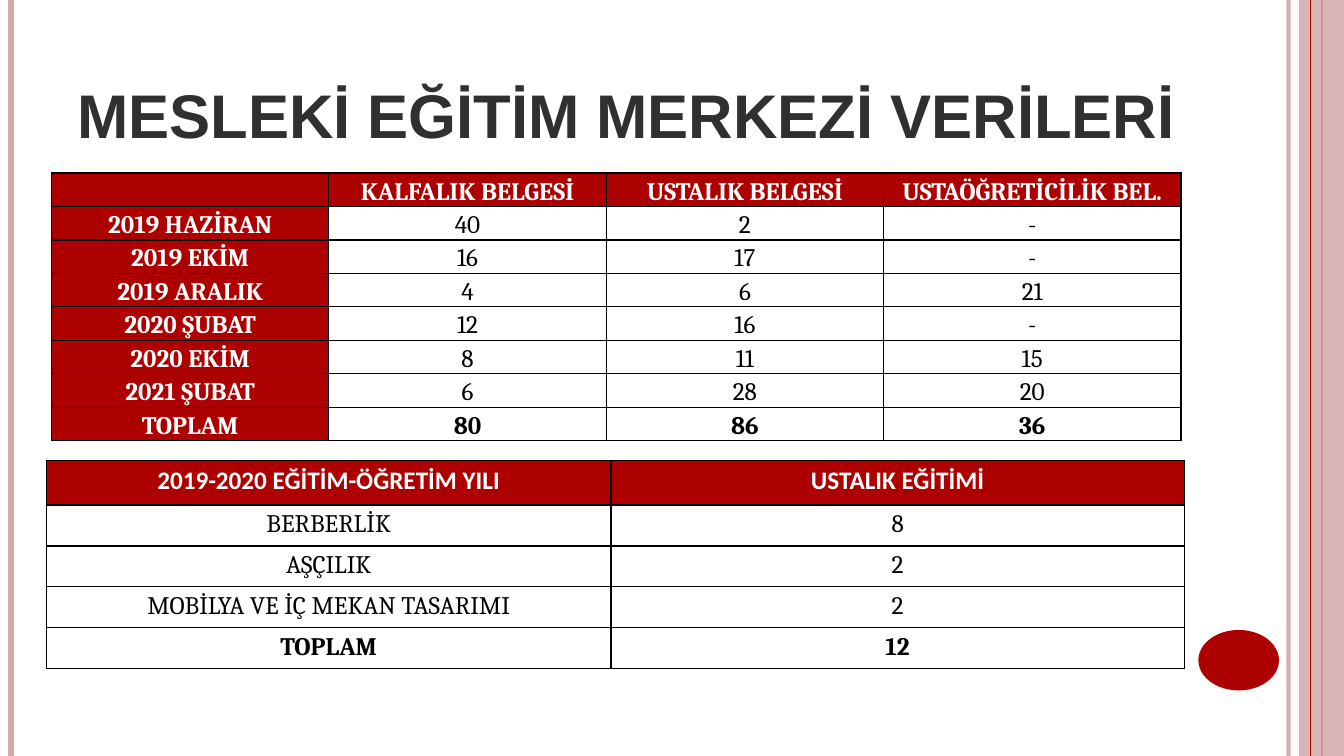
from dataclasses import dataclass

from lxml import etree
from pptx import Presentation
from pptx.dml.color import RGBColor
from pptx.enum import shapes, text
from pptx.oxml import ns
from pptx.util import Pt


@dataclass(frozen=True)
class Theme:
    red: str = "AD0101"
    rose: str = "D3ABAB"
    white: str = "FFFFFF"
    black: str = "000000"
    charcoal: str = "303030"
    title_font: str = "Arial"
    heading_font: str = "Calibri"
    body_font: str = "Cambria"
    title_size: int = 44
    cell_size: int = 18


THEME = Theme()
SLIDE_WIDTH, SLIDE_HEIGHT = 960, 540

CERTIFICATES = [
    ["", "KALFALIK BELGESİ", "USTALIK BELGESİ", "USTAÖĞRETİCİLİK BEL."],
    ["2019 HAZİRAN", "40", "2", "-"],
    ["2019 EKİM", "16", "17", "-"],
    ["2019 ARALIK", "4", "6", "21"],
    ["2020 ŞUBAT", "12", "16", "-"],
    ["2020 EKİM", "8", "11", "15"],
    ["2021 ŞUBAT", "6", "28", "20"],
    ["TOPLAM", "80", "86", "36"],
]
TRAINING = [
    ["2019-2020 EĞİTİM-ÖĞRETİM YILI", "USTALIK EĞİTİMİ"],
    ["BERBERLİK", "8"],
    ["AŞÇILIK", "2"],
    ["MOBİLYA VE İÇ MEKAN TASARIMI", "2"],
    ["TOPLAM", "12"],
]


def rgb(color):
    return RGBColor.from_string(color)


def set_alpha(part, percent):
    color = next(part._element.spPr.iter(ns.qn("a:srgbClr")))
    etree.SubElement(color, ns.qn("a:alpha"), val=str(percent * 1000))


def style_font(font, name, size, color, bold):
    font.name, font.size, font.bold = name, Pt(size), bold
    font.color.rgb = rgb(color)


def add_rule(slide, x, height, color, width):
    rule = slide.shapes.add_connector(
        shapes.MSO_CONNECTOR.STRAIGHT, Pt(x), Pt(0), Pt(x), Pt(height))
    rule.line.color.rgb = rgb(color)
    rule.line.width = Pt(width)
    etree.SubElement(rule._element.spPr, ns.qn("a:effectLst"))
    return rule


def add_solid(slide, preset, left, top, width, height, color):
    solid = slide.shapes.add_shape(preset, Pt(left), Pt(top), Pt(width), Pt(height))
    solid.shadow.inherit = False
    solid.fill.solid()
    solid.fill.fore_color.rgb = rgb(color)
    solid.line.fill.background()
    return solid


def add_frame(slide, width, height):
    set_alpha(add_rule(slide, width - 39.6, height, THEME.rose, 3), 93)
    add_rule(slide, 8, height, THEME.rose, 4.5)
    add_rule(slide, width - 16, height, THEME.red, 1.5)
    band = add_solid(slide, shapes.MSO_SHAPE.RECTANGLE,
                     width - 32, 0, 32, height, THEME.rose)
    set_alpha(band, 87)
    add_rule(slide, width - 24, height, THEME.red, 0.75)
    add_solid(slide, shapes.MSO_SHAPE.OVAL,
              width - 104, height - 90, 57.6, 43.2, THEME.red)


def add_title(slide, wording, left, top, width, height):
    title = slide.shapes.add_textbox(Pt(left), Pt(top), Pt(width), Pt(height)).text_frame
    title.word_wrap = True
    title.vertical_anchor = text.MSO_ANCHOR.BOTTOM
    heading = title.paragraphs[0]
    heading.text = wording
    style_font(heading.font, THEME.title_font, THEME.title_size, THEME.charcoal, True)


def add_borders(cell):
    properties = cell._tc.get_or_add_tcPr()
    for position, side in enumerate(("a:lnL", "a:lnR", "a:lnT", "a:lnB")):
        border = etree.Element(ns.qn(side), w=str(Pt(1)))
        fill = etree.SubElement(border, ns.qn("a:solidFill"))
        etree.SubElement(fill, ns.qn("a:srgbClr"), val=THEME.black)
        properties.insert(position, border)


def fill_cell(cell, wording, font_name, color, background, bold):
    cell.fill.solid()
    cell.fill.fore_color.rgb = rgb(background)
    add_borders(cell)
    entry = cell.text_frame.paragraphs[0]
    entry.text = wording
    entry.alignment = text.PP_ALIGN.CENTER
    style_font(entry.font, font_name, THEME.cell_size, color, bold)
    return entry


def add_grid(slide, left, top, column_widths, row_heights):
    grid = slide.shapes.add_table(
        len(row_heights), len(column_widths), Pt(left), Pt(top),
        Pt(sum(column_widths)), Pt(sum(row_heights))).table
    grid.first_row = grid.horz_banding = False
    for column, width in zip(grid.columns, column_widths):
        column.width = Pt(width)
    for row, height in zip(grid.rows, row_heights):
        row.height = Pt(height)
    return grid


def add_certificates(slide, left, top, width, height):
    count = len(CERTIFICATES)
    last_column = 212.4
    grid = add_grid(slide, left, top,
                    [(width - last_column) / 3] * 3 + [last_column],
                    [height / count] * count)
    for r, record in enumerate(CERTIFICATES):
        for c, wording in enumerate(record):
            header = r == 0 or c == 0
            cell = grid.cell(r, c)
            cell.margin_left = cell.margin_right = Pt(5)
            cell.margin_top = cell.margin_bottom = Pt(0)
            entry = fill_cell(cell, wording, THEME.body_font,
                              THEME.white if header else THEME.black,
                              THEME.red if header else THEME.white,
                              header or r == count - 1)
            entry.line_spacing = 1.15
            entry.space_after = Pt(10)


def add_training(slide, left, top, width, height):
    count = len(TRAINING)
    header_height, first_column = 31.6, 403.2
    grid = add_grid(slide, left, top, [first_column, width - first_column],
                    [header_height] + [(height - header_height) / (count - 1)] * (count - 1))
    for r, record in enumerate(TRAINING):
        header = r == 0
        for c, wording in enumerate(record):
            fill_cell(grid.cell(r, c), wording,
                      THEME.heading_font if header else THEME.body_font,
                      THEME.white if header else THEME.black,
                      THEME.red if header else THEME.white,
                      header or r == count - 1)


def main():
    deck = Presentation()
    deck.slide_width, deck.slide_height = Pt(SLIDE_WIDTH), Pt(SLIDE_HEIGHT)
    slide = deck.slides.add_slide(deck.slide_layouts[6])
    slide.background.fill.solid()
    slide.background.fill.fore_color.rgb = rgb(THEME.white)
    add_frame(slide, SLIDE_WIDTH, SLIDE_HEIGHT)
    add_certificates(slide, 36.8, 123.6, 806.8, 191.2)
    add_training(slide, 33.2, 329.2, 812.8, 148.4)
    add_title(slide, "MESLEKİ EĞİTİM MERKEZİ VERİLERİ", 48, 21.6, 859.6, 90)
    deck.save("out.pptx")


if __name__ == "__main__":
    main()
